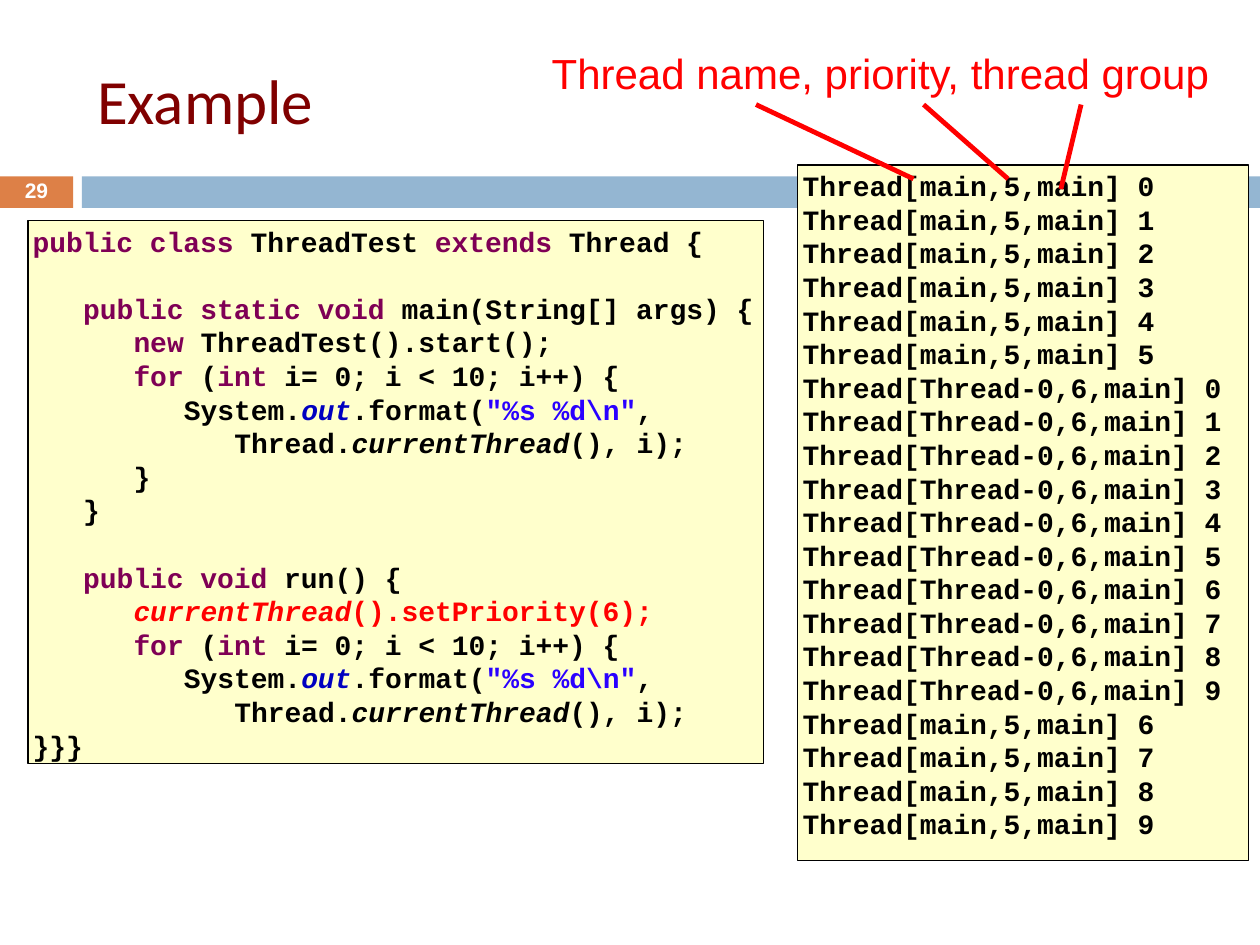
import pptx
import pptx.dml.color
import pptx.enum.shapes
import pptx.enum.text
import pptx.oxml.ns
import pptx.util
from lxml import etree
from pptx.util import Inches, Pt

COLORS = {
    "title": "800000",
    "number_band": "DD8047",
    "title_band": "94B6D2",
    "white": "FFFFFF",
    "code_fill": "FFFFCC",
    "plain": "000000",
    "keyword": "7F0055",
    "field": "0000C0",
    "string": "2A00FF",
    "accent": "FF0000",
}
# style: (colour, italic)
STYLES = {
    "plain": ("plain", False),
    "keyword": ("keyword", False),
    "field": ("field", True),
    "string": ("string", False),
    "method": ("plain", True),
    "accent": ("accent", False),
    "accent_method": ("accent", True),
}
LINE_HEIGHT = Pt(19.2)
INDENT_STEP = 0.4  # three characters of 16 pt Courier New

# Each line: (indent level, blank line before, [(text, style), ...])
PRINT_LOOP = [
    (2, False, [("for", "keyword"), (" (", "plain"), ("int", "keyword"),
                (" i= 0; i < 10; i++) {", "plain")]),
    (3, False, [("System.", "plain"), ("out", "field"), (".format(", "plain"),
                ('"%s %d\\n"', "string"), (",", "plain")]),
    (4, False, [("Thread.", "plain"), ("currentThread", "method"), ("(), i);", "plain")]),
]
THREAD_TEST = [
    (0, False, [("public class", "keyword"), (" ThreadTest ", "plain"),
                ("extends", "keyword"), (" Thread {", "plain")]),
    (1, True, [("public static void", "keyword"), (" main(String[] args) {", "plain")]),
    (2, False, [("new", "keyword"), (" ThreadTest().start();", "plain")]),
    *PRINT_LOOP,
    (2, False, [("}", "plain")]),
    (1, False, [("}", "plain")]),
    (1, True, [("public void", "keyword"), (" run() {", "plain")]),
    (2, False, [("currentThread", "accent_method"), ("().setPriority(6);", "accent")]),
    *PRINT_LOOP,
    (0, False, [("}}}", "plain")]),
]
OUTPUT_RUNS = [
    ("main,5", range(6)),
    ("Thread-0,6", range(10)),
    ("main,5", range(6, 10)),
]


def rgb(name):
    return pptx.dml.color.RGBColor.from_string(COLORS[name])


def set_font(font, name, size, color=None, bold=False):
    font.name, font.size, font.bold = name, Pt(size), bold
    if color:
        font.color.rgb = rgb(color)


def add_rectangle(slide, left, top, width, height, fill, outline=None):
    rectangle = slide.shapes.add_shape(
        pptx.enum.shapes.MSO_SHAPE.RECTANGLE,
        Inches(left), Inches(top), Inches(width), Inches(height))
    rectangle.shadow.inherit = False
    rectangle.fill.solid()
    rectangle.fill.fore_color.rgb = rgb(fill)
    if outline:
        rectangle.line.color.rgb = rgb(outline)
        rectangle.line.width = Pt(1)
    else:
        rectangle.line.fill.background()
    return rectangle


def add_label(shapes, text, left, top, width, height, size, color, bold=False):
    label = shapes.add_textbox(Inches(left), Inches(top), Inches(width), Inches(height))
    label.text_frame.text = text
    paragraph = label.text_frame.paragraphs[0]
    set_font(paragraph.font, "Arial", size, color, bold)
    return label.text_frame, paragraph


def add_code_panel(slide, left, top, width, height, lines, wrap):
    panel = add_rectangle(slide, left, top, width, height, "code_fill", "plain")
    frame = panel.text_frame
    frame.word_wrap = wrap
    frame.vertical_anchor = pptx.enum.text.MSO_ANCHOR.TOP
    frame.margin_left = frame.margin_bottom = 0
    frame.margin_top, frame.margin_right = Inches(0.03), Inches(0.04)
    for index, (level, blank_before, tokens) in enumerate(lines):
        paragraph = frame.add_paragraph() if index else frame.paragraphs[0]
        paragraph.alignment = pptx.enum.text.PP_ALIGN.LEFT
        paragraph.line_spacing = LINE_HEIGHT
        paragraph.space_before = LINE_HEIGHT if blank_before else Pt(0)
        properties = paragraph._p.get_or_add_pPr()
        properties.set("marL", str(Inches(0.04 + level * INDENT_STEP)))
        properties.set("indent", "0")
        set_font(paragraph.font, "Courier New", 16, bold=True)
        for text, style in tokens:
            color, italic = STYLES[style]
            run = paragraph.add_run()
            run.text = text
            run.font.color.rgb = rgb(color)
            run.font.italic = italic


def add_pointer(shapes, start, end):
    pointer = shapes.add_connector(
        pptx.enum.shapes.MSO_CONNECTOR.STRAIGHT, *map(Inches, start + end))
    pointer.line.color.rgb = rgb("accent")
    pointer.line.width = Pt(2.75)
    etree.SubElement(pointer._element.spPr, pptx.oxml.ns.qn("a:effectLst"))


def add_title(slide):
    title = slide.shapes.title
    title.left, title.top = Inches(0.67), Inches(0.25)
    title.width, title.height = Inches(8.92), Inches(1.08)
    title.text_frame.text = "Example"
    title.text_frame.vertical_anchor = pptx.enum.text.MSO_ANCHOR.MIDDLE
    paragraph = title.text_frame.paragraphs[0]
    paragraph.alignment = pptx.enum.text.PP_ALIGN.LEFT
    set_font(paragraph.font, "Calibri", 36, "title")


def add_slide_number(slide):
    frame, paragraph = add_label(slide.shapes, "29", 0, 1.39, 0.58, 0.27, 12, "white", True)
    frame.word_wrap = True
    frame.vertical_anchor = pptx.enum.text.MSO_ANCHOR.MIDDLE
    paragraph.alignment = pptx.enum.text.PP_ALIGN.CENTER
    paragraph.line_spacing = 0.8


def add_callout(slide):
    callout = slide.shapes.add_group_shape().shapes
    frame, _ = add_label(callout, "Thread name, priority, thread group",
                         4.28, 0.33, 5.47, 0.5, 24, "accent")
    frame.word_wrap = False
    for start, end in [((6, 0.83), (7.25, 1.42)),
                       ((7.33, 0.83), (8, 1.42)),
                       ((8.58, 0.83), (8.42, 1.5))]:
        add_pointer(callout, start, end)


def main():
    presentation = pptx.Presentation()
    presentation.slide_width, presentation.slide_height = Inches(10), Inches(7.5)
    slide = presentation.slides.add_slide(presentation.slide_layouts[5])
    add_rectangle(slide, 0, 1.4, 0.58, 0.25, "number_band")
    add_rectangle(slide, 0.65, 1.4, 9.35, 0.25, "title_band")
    add_title(slide)
    add_slide_number(slide)
    output = [(0, False, [(f"Thread[{thread},main] {count}", "plain")])
              for thread, counts in OUTPUT_RUNS for count in counts]
    add_code_panel(slide, 6.33, 1.31, 3.58, 5.52, output, wrap=True)
    add_code_panel(slide, 0.22, 1.75, 5.84, 4.31, THREAD_TEST, wrap=False)
    add_callout(slide)
    presentation.save("out.pptx")


if __name__ == "__main__":
    main()
